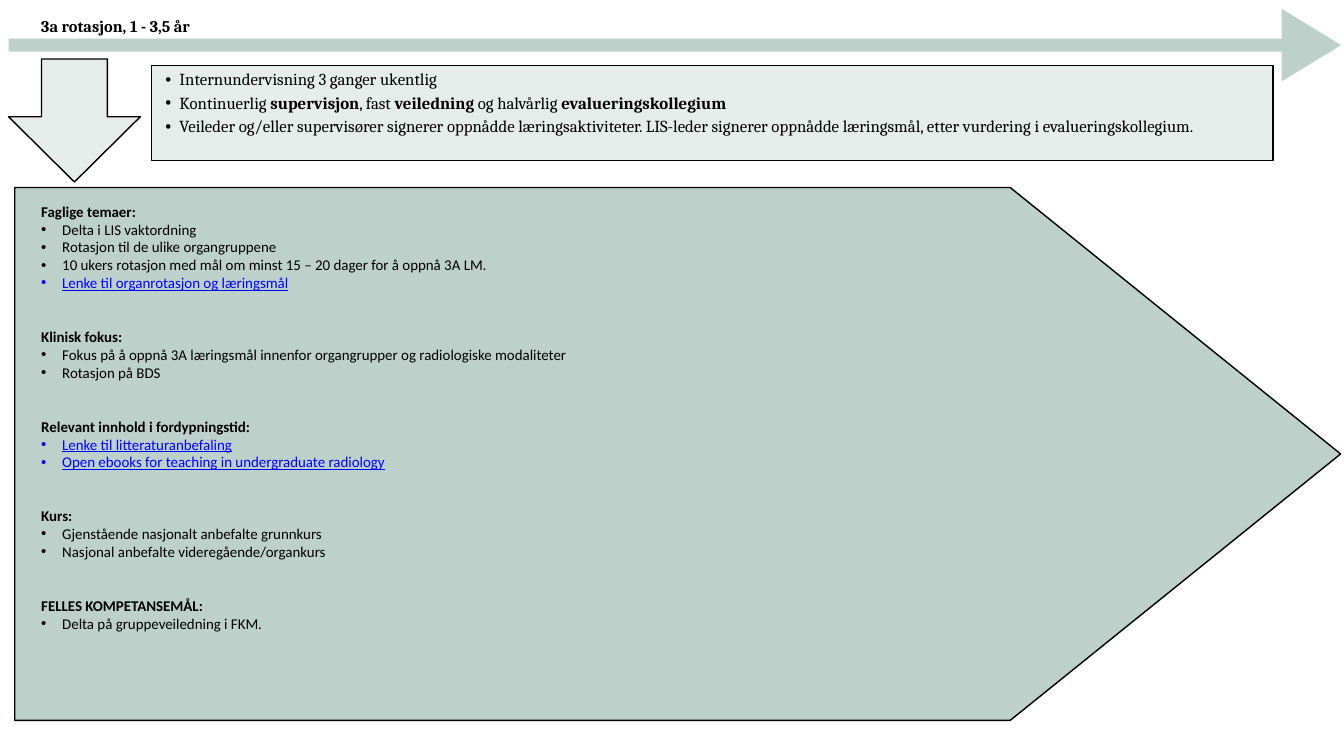
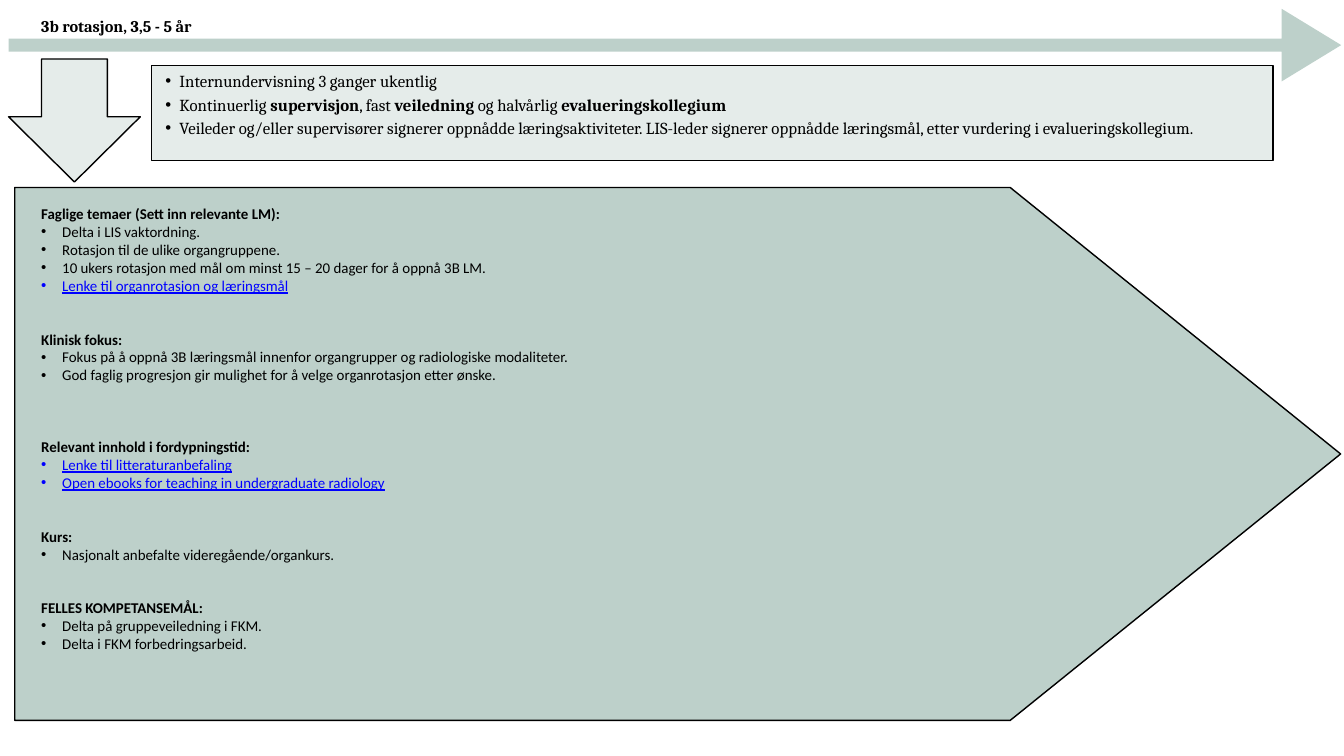
from dataclasses import dataclass

from lxml import etree
from pptx import Presentation
from pptx.dml.color import RGBColor
from pptx.enum import shapes, text
from pptx.oxml.ns import qn
from pptx.util import Pt


@dataclass(frozen=True)
class Theme:
    pale: RGBColor = RGBColor(0xE5, 0xEC, 0xEA)
    sage: RGBColor = RGBColor(0xBD, 0xD0, 0xCA)
    ink: RGBColor = RGBColor(0, 0, 0)
    link: RGBColor = RGBColor(0, 0, 0xFF)
    serif: str = "Cambria"
    sans: str = "Calibri"
    title_size: float = 17.5
    intro_size: float = 18
    body_size: float = 16
    leading: float = 25.2
    body_leading: float = 19.2
    outline: float = 1.5


T = Theme()
SHAPE = shapes.MSO_SHAPE

TIMELINE = (9.2, 9.4, 1427.8, 77.8)
DOWN_ARROW = (9.2, 63.2, 141.1, 131.8)
INTRO = (162.3, 70, 1201.7, 102.2)
BODY = (15.8, 200.9, 1420.6, 571)

INTRO_ITEMS = [
    "Internundervisning 3 ganger ukentlig",
    "Kontinuerlig *supervisjon*, fast *veiledning* og halvårlig *evalueringskollegium*",
    "Veileder og/eller supervisører signerer oppnådde læringsaktiviteter. "
    "LIS-leder signerer oppnådde læringsmål, etter vurdering i evalueringskollegium.",
]
ORGAN_LINK = "Lenke til organrotasjon og læringsmål"
READING_LINKS = [
    "Lenke til litteraturanbefaling",
    "Open ebooks for teaching in undergraduate radiology",
]
LINKS = {ORGAN_LINK, *READING_LINKS}

ROTATIONS = [
    dict(
        title="3a rotasjon, 1 - 3,5 år", intro_top=0.5, body_top=15.8, body_height=465,
        sections=[
            ("Faglige temaer:", 0, [
                "Delta i LIS vaktordning",
                "Rotasjon til de ulike organgruppene",
                "10 ukers rotasjon med mål om minst 15 – 20 dager for å oppnå 3A LM.",
                ORGAN_LINK]),
            ("Klinisk fokus:", 2, [
                "Fokus på å oppnå 3A læringsmål innenfor organgrupper og radiologiske modaliteter",
                "Rotasjon på BDS"]),
            ("Relevant innhold i fordypningstid:", 2, READING_LINKS),
            ("Kurs:", 2, [
                "Gjenstående nasjonalt anbefalte grunnkurs",
                "Nasjonal anbefalte videregående/organkurs"]),
            ("FELLES KOMPETANSEMÅL:", 2, ["Delta på gruppeveiledning i FKM."]),
        ]),
    dict(
        title="3b rotasjon, 3,5 - 5 år", intro_top=2.2, body_top=18.5, body_height=523,
        sections=[
            ("Faglige temaer (Sett inn relevante LM):", 0, [
                "Delta i LIS vaktordning.",
                "Rotasjon til de ulike organgruppene.",
                "10 ukers rotasjon med mål om minst 15 – 20 dager for å oppnå 3B LM.",
                ORGAN_LINK]),
            ("Klinisk fokus:", 2, [
                "Fokus på å oppnå 3B læringsmål innenfor organgrupper og radiologiske modaliteter.",
                "God faglig progresjon gir mulighet for å velge organrotasjon etter ønske."]),
            ("Relevant innhold i fordypningstid:", 3, READING_LINKS),
            ("Kurs:", 2, ["Nasjonalt anbefalte videregående/organkurs."]),
            ("FELLES KOMPETANSEMÅL:", 2, [
                "Delta på gruppeveiledning i FKM.",
                "Delta i FKM forbedringsarbeid."]),
        ]),
]


def apply(obj, **values):
    for name, value in values.items():
        setattr(obj, name, value)


def block(s, kind, box, fill, adjustments=(), outlined=True):
    sp = s.shapes.add_shape(kind, *map(Pt, box))
    sp.shadow.inherit = False
    sp.fill.solid()
    sp.fill.fore_color.rgb = fill
    if outlined:
        sp.line.color.rgb = T.ink
        sp.line.width = Pt(T.outline)
    else:
        sp.line.fill.background()
    for i, value in enumerate(adjustments):
        sp.adjustments[i] = value
    return sp


def prepare_frame(tf):
    apply(tf, word_wrap=True, auto_size=text.MSO_AUTO_SIZE.NONE,
          vertical_anchor=text.MSO_ANCHOR.TOP,
          margin_left=0, margin_top=0, margin_right=0, margin_bottom=0)
    return tf


def text_frame(s, *box):
    return prepare_frame(s.shapes.add_textbox(*map(Pt, box)).text_frame)


def next_paragraph(tf):
    p = tf.paragraphs[0]
    return tf.add_paragraph() if p.runs else p


def write(p, content, font, size, color=T.ink, bold=False, underline=False):
    p.alignment = text.PP_ALIGN.LEFT
    for i, piece in enumerate(content.split("*")):
        if piece:
            r = p.add_run()
            r.text = piece
            apply(r.font, name=font, size=Pt(size),
                  bold=bold or i % 2 == 1, underline=underline)
            r.font.color.rgb = color


def bullet(p, margin, hang):
    pPr = p._p.get_or_add_pPr()
    pPr.set("marL", str(Pt(margin)))
    pPr.set("indent", str(-Pt(hang)))
    etree.SubElement(pPr, qn("a:buFont")).set("typeface", "Arial")
    etree.SubElement(pPr, qn("a:buChar")).set("char", "•")


def add_timeline(s, box, title):
    x, y, w, h = box
    block(s, SHAPE.RIGHT_ARROW, box, T.sage, (0.18, 0.82), outlined=False)
    sp = s.shapes.title
    apply(sp, left=Pt(x + 35), top=Pt(y + 3.6), width=Pt(316), height=Pt(23))
    p = prepare_frame(sp.text_frame).paragraphs[0]
    apply(p, line_spacing=Pt(T.leading), space_before=Pt(0))
    write(p, title, T.serif, T.title_size, bold=True)


def add_intro(s, box, text_top):
    x, y, w, h = box
    block(s, SHAPE.RECTANGLE, box, T.pale)
    tf = text_frame(s, x, y + text_top, w + 22, h - text_top)
    for item in INTRO_ITEMS:
        p = next_paragraph(tf)
        apply(p, level=1, line_spacing=Pt(T.leading))
        bullet(p, 30, 15)
        write(p, item, T.serif, T.intro_size)


def add_body(s, box, sections, text_top, text_height):
    x, y, w, h = box
    block(s, SHAPE.PENTAGON, box, T.sage, (0.62,))
    tf = text_frame(s, x + 28.4, y + text_top, 1036, text_height)
    for heading, gap_lines, items in sections:
        p = next_paragraph(tf)
        p.space_before = Pt(gap_lines * T.body_leading)
        write(p, heading, T.sans, T.body_size, bold=True)
        for item in items:
            p = next_paragraph(tf)
            bullet(p, 22.5, 22.5)
            linked = item in LINKS
            write(p, item, T.sans, T.body_size,
                  T.link if linked else T.ink, underline=linked)


def add_rotation(prs, rotation):
    s = prs.slides.add_slide(prs.slide_layouts[5])
    block(s, SHAPE.DOWN_ARROW, DOWN_ARROW, T.pale, (0.5, 0.53))
    add_body(s, BODY, rotation["sections"], rotation["body_top"], rotation["body_height"])
    add_timeline(s, TIMELINE, rotation["title"])
    add_intro(s, INTRO, rotation["intro_top"])


def main():
    prs = Presentation()
    apply(prs, slide_width=Pt(1440), slide_height=Pt(810))
    for rotation in ROTATIONS:
        add_rotation(prs, rotation)
    prs.save("out.pptx")


if __name__ == "__main__":
    main()
